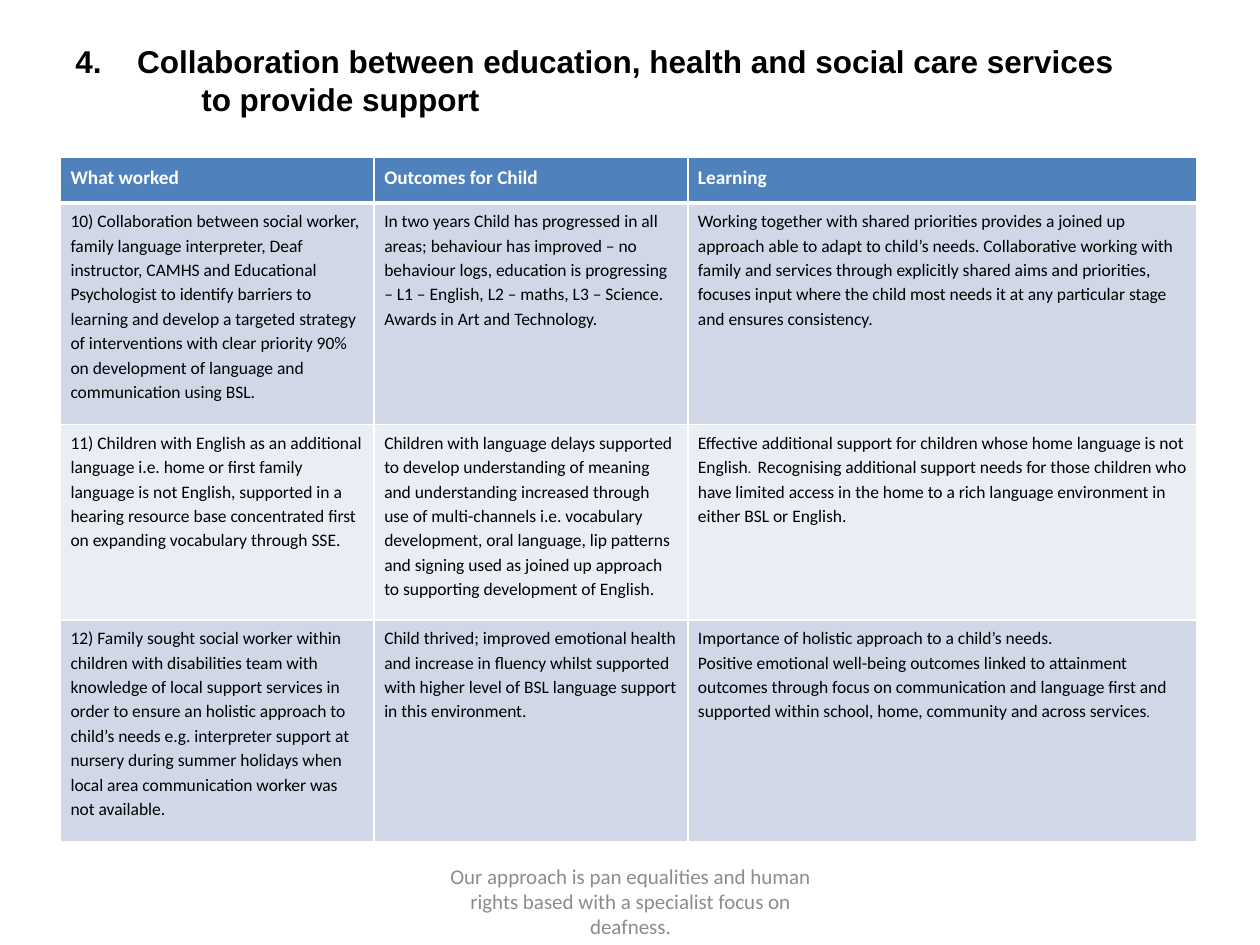
"""Builds a slide on collaboration between education, health and social care services."""
from lxml.etree import SubElement
from pptx import Presentation
from pptx.dml.color import RGBColor
from pptx.enum.text import MSO_ANCHOR as Anchor, PP_ALIGN as Align
from pptx.oxml.ns import qn
from pptx.util import Inches, Pt

COLORS = {
    "header": "4F81BD",
    "band_dark": "D0D8E8",
    "band_light": "E9EDF4",
    "white": "FFFFFF",
    "black": "000000",
    "footer": "8C8C8C",
}


def add_run(paragraph, text, size, color, font="Calibri", bold=False):
    run = paragraph.add_run()
    run.text = text
    run.font.name = font
    run.font.size = Pt(size)
    run.font.bold = bold
    run.font.color.rgb = RGBColor.from_string(COLORS[color])


def add_border(cell, side, width):
    properties = cell._tc.get_or_add_tcPr()
    line = SubElement(properties, qn(f"a:ln{side}"), w=str(Pt(width)))
    fill = SubElement(line, qn("a:solidFill"))
    SubElement(fill, qn("a:srgbClr"), val=COLORS["white"])


presentation = Presentation()
presentation.slide_width = Inches(10)
presentation.slide_height = Inches(7.5)
slide = presentation.slides.add_slide(presentation.slide_layouts[6])

footer = slide.shapes.add_textbox(Inches(3.42), Inches(6.95), Inches(3.17), Inches(0.4))
footer.text_frame.word_wrap = True
footer.text_frame.vertical_anchor = Anchor.MIDDLE
paragraph = footer.text_frame.paragraphs[0]
paragraph.alignment = Align.CENTER
add_run(
    paragraph,
    "Our approach is pan equalities and human rights based with a specialist focus on deafness.",
    12,
    "footer",
)

headers = ["What worked", "Outcomes for Child", "Learning"]
body = [
    [
        "10) Collaboration between social worker, family language interpreter, Deaf instructor, "
        "CAMHS and Educational Psychologist to identify barriers to learning and develop a targeted "
        "strategy of interventions with clear priority 90% on development of language and "
        "communication using BSL.",
        "In two years Child has progressed in all areas; behaviour has improved – no behaviour logs, "
        "education is progressing – L1 – English, L2 – maths, L3 – Science.  Awards in Art and "
        "Technology.",
        "Working together with shared priorities provides a joined up approach able to adapt to "
        "child’s needs. Collaborative working with family and services through explicitly shared "
        "aims and priorities, focuses input where the child most needs it at any particular stage "
        "and ensures consistency.",
    ],
    [
        "11) Children with English as an additional language i.e. home or first family language is "
        "not English, supported in a hearing resource base concentrated first on expanding "
        "vocabulary through SSE.",
        "Children with language delays supported to develop understanding of meaning and "
        "understanding increased through use of multi-channels i.e. vocabulary development, oral "
        "language, lip patterns and signing used as joined up approach to supporting development "
        "of English.",
        [
            [
                ("Effective additional support for children whose home language is not English", 10),
                (".  ", 8),
                ("Recognising additional support needs for those children who have limited access "
                 "in the home to a rich language environment in either BSL or English.", 10),
            ]
        ],
    ],
    [
        "12) Family sought social worker within children with disabilities team with knowledge of "
        "local support services in order to ensure an holistic approach to child’s needs e.g. "
        "interpreter support at nursery during summer holidays when local area communication "
        "worker was not available.",
        "Child thrived; improved emotional health and increase in fluency whilst supported with "
        "higher level of BSL language support in this environment.",
        [
            [("Importance of holistic approach to a child’s needs.", 10)],
            [
                ("Positive emotional well-being outcomes linked to attainment outcomes through focus "
                 "on communication and language first and supported within school, home, community "
                 "and across services", 10),
                (".", 8),
            ],
        ],
    ],
]
column_widths = [2.49, 2.49, 4.04]
row_heights = [0.36, 1.76, 1.55, 1.76]

table = slide.shapes.add_table(
    len(row_heights), len(column_widths),
    Inches(0.48), Inches(1.25), Inches(sum(column_widths)), Inches(sum(row_heights)),
).table
for column, width in zip(table.columns, column_widths):
    column.width = Inches(width)
for row, height in zip(table.rows, row_heights):
    row.height = Inches(height)

for row_index, contents in enumerate([headers] + body):
    is_header = row_index == 0
    size = 11 if is_header else 10
    text_color = "white" if is_header else "black"
    fill_color = "header" if is_header else ("band_light", "band_dark")[row_index % 2]
    borders = {"L": 1, "R": 1, "T": 3 if row_index == 1 else 1, "B": 3 if is_header else 1}
    for column_index, content in enumerate(contents):
        cell = table.cell(row_index, column_index)
        cell.margin_left = cell.margin_right = Inches(0.08)
        cell.margin_top = cell.margin_bottom = Inches(0.04)
        for side, width in borders.items():
            add_border(cell, side, width)
        cell.fill.solid()
        cell.fill.fore_color.rgb = RGBColor.from_string(COLORS[fill_color])
        paragraphs = [[(content, size)]] if isinstance(content, str) else content
        for index, runs in enumerate(paragraphs):
            frame = cell.text_frame
            paragraph = frame.add_paragraph() if index else frame.paragraphs[0]
            paragraph.line_spacing = 1.15
            for text, run_size in runs:
                add_run(paragraph, text, run_size, text_color, bold=is_header)

title = slide.shapes.add_textbox(Inches(0), Inches(0.28), Inches(9.5), Inches(0.71))
title.text_frame.word_wrap = True
title.text_frame.vertical_anchor = Anchor.MIDDLE
title_lines = [
    ("4.\tCollaboration between education, health and social care services", 0.99, -0.49),
    ("to provide support", 1.5, 0),
]
for index, (text, margin, indent) in enumerate(title_lines):
    frame = title.text_frame
    paragraph = frame.add_paragraph() if index else frame.paragraphs[0]
    properties = paragraph._p.get_or_add_pPr()
    properties.set("marL", str(Inches(margin)))
    properties.set("indent", str(Inches(indent)))
    add_run(paragraph, text, 18, "black", "Arial", True)

presentation.save("out.pptx")
